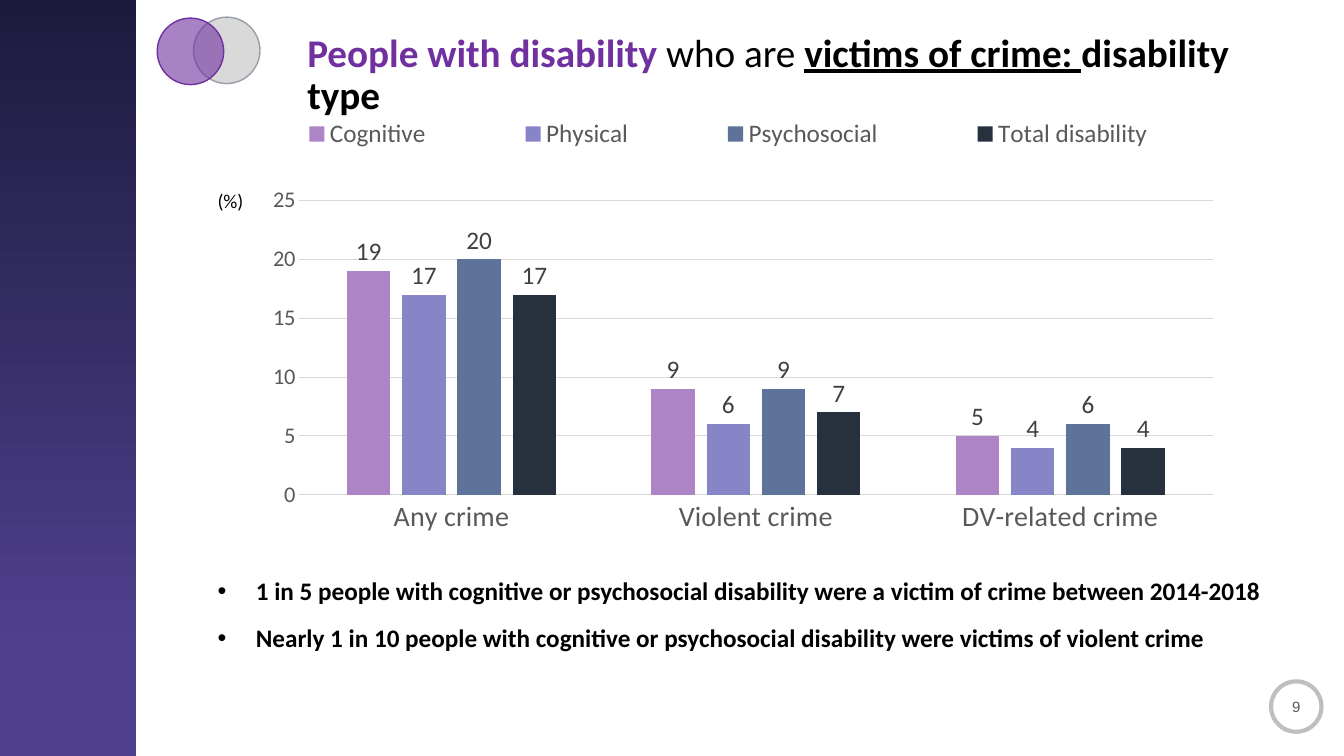
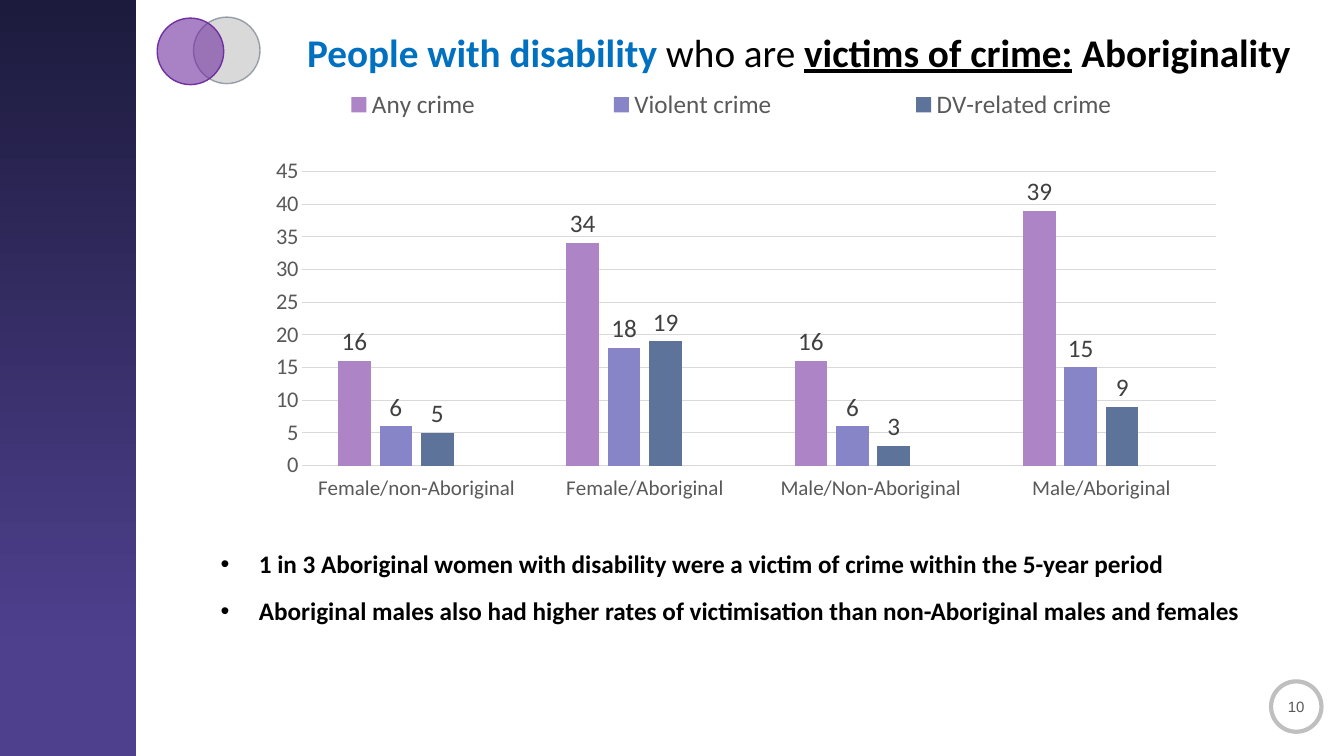
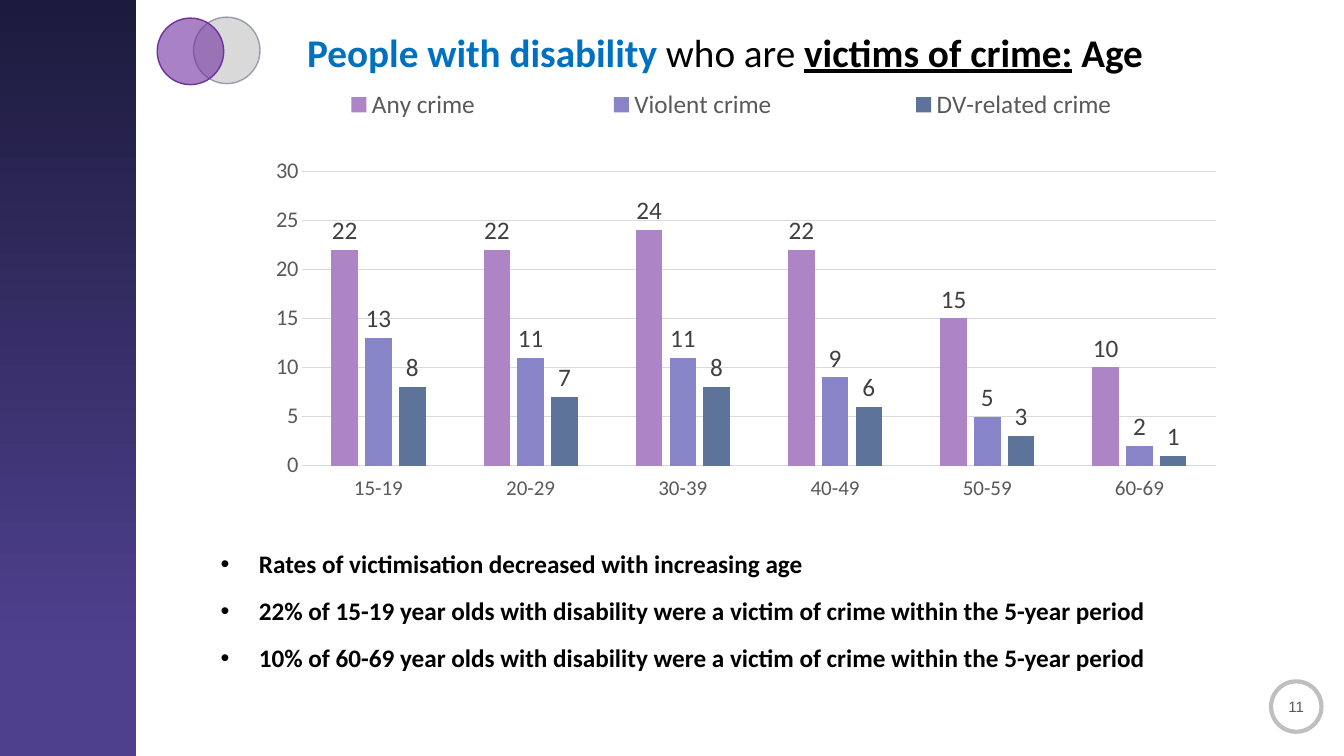
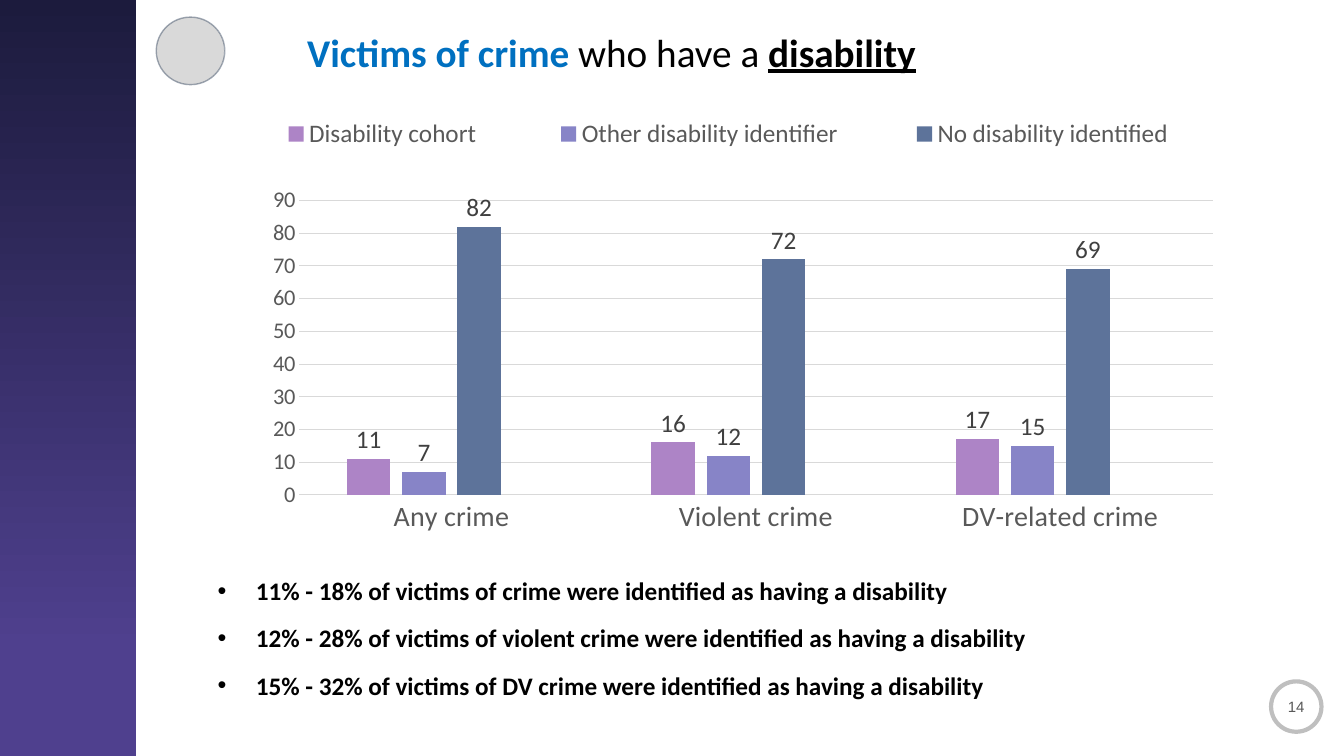
from dataclasses import dataclass
from typing import NamedTuple, Optional

from lxml import etree
from pptx import Presentation
from pptx import util as u
from pptx.chart.data import CategoryChartData
from pptx.dml.color import RGBColor
from pptx.enum import chart as charts, dml, shapes, text
from pptx.oxml.ns import qn

# Lengths are cells of a grid with ten columns and ten rows to the inch
CELL = u.Inches(0.1)
COLUMNS, ROWS = 133.33, 75

# Shared look
FONT, NUMBER_FONT = "Calibri", "Arial"
BLACK, WHITE = "000000", "FFFFFF"
PURPLE, BLUE = "7030A0", "0070C0"
BAND_TOP, BAND_BOTTOM = "1C1B3D", "4F408E"
SLATE, SILVER, RING_GREY = "44546A", "D9D9D9", "BFBFBF"
AXIS_GREY, LABEL_GREY = "595959", "404040"
SERIES_COLORS = ("AD84C6", "8784C7", "5D739A", "27303D")


class Box(NamedTuple):
    left: float
    top: float
    width: float
    height: float


class Run(NamedTuple):
    text: str
    color: str = BLACK
    bold: bool = True
    underline: bool = False


@dataclass(frozen=True)
class Placement:
    chart: Box
    bullets_left: float
    bullets_top: float
    category_size: int
    labels_low: bool = False


@dataclass(frozen=True)
class CrimeSlide:
    number: int
    title: tuple[Run, ...]
    placement: Placement
    categories: tuple[str, ...]
    series: dict[str, tuple[Optional[int], ...]]
    axis_top: int
    axis_step: int
    bullets: tuple[str, ...]
    title_width: float = 102.3
    bullets_width: float = 104
    unit: str = ""
    overlapping: bool = True


LOWER = Placement(Box(21.6, 9.9, 101.3, 48.1), 20.6, 56.3, 20)
UPPER = Placement(Box(21.9, 7, 101.3, 48.1), 20.9, 53.6, 15, labels_low=True)

# Parts of the chart, in cells from its corner
PLOT = Box(8.1, 10, 90.6, 29.2)
LEGEND = Box(0, 1, 101.3, 4.8)

BAND = Box(0, 0, 13.5, ROWS)
NUMBER_RING = Box(126.1, 67.6, 5, 5)
UNIT_BOX = Box(20.6, 18.3, 4.6, 3.4)
LEFT_CIRCLE = Box(15.6, 1.8, 6.6, 6.6)
RIGHT_CIRCLE = Box(19.2, 1.7, 6.6, 6.6)
SINGLE_CIRCLE = Box(15.5, 1.7, 6.8, 6.7)


def rgb(color: str) -> RGBColor:
    return RGBColor.from_string(color)


def place(box: Box) -> tuple[int, ...]:
    return tuple(round(length * CELL) for length in box)


def style_font(font, *, size: float, color: str = BLACK, name: str = FONT,
               bold: bool = False, underline: bool = False) -> None:
    font.name, font.size = name, u.Pt(size)
    font.bold, font.underline = bold, underline
    font.color.rgb = rgb(color)


def add_run(paragraph, words: str, **style) -> None:
    run = paragraph.add_run()
    run.text = words
    style_font(run.font, **style)


def add_text_box(slide, box: Box, wrap: bool = True):
    frame = slide.shapes.add_textbox(*place(box)).text_frame
    frame.word_wrap = wrap
    return frame


def add_shape(slide, kind, box: Box, line: Optional[str] = None, weight: float = 1):
    shape = slide.shapes.add_shape(kind, *place(box))
    shape.shadow.inherit = False
    if line:
        shape.line.color.rgb = rgb(line)
        shape.line.width = u.Pt(weight)
    else:
        shape.line.fill.background()
    return shape


def set_opacity(properties, percent: int) -> None:
    """Make the first solid fill under the element see-through."""
    color = next(properties.iter(qn("a:srgbClr")))
    etree.SubElement(color, qn("a:alpha"), val=str(percent * 1000))


# Frame of every slide
def add_band(slide) -> None:
    fill = add_shape(slide, shapes.MSO_SHAPE.RECTANGLE, BAND).fill
    fill.gradient()
    fill.gradient_angle = 270
    stops = ((0, BAND_TOP), (0.86, BAND_BOTTOM))
    for stop, (position, color) in zip(fill.gradient_stops, stops):
        stop.position = position
        stop.color.rgb = rgb(color)


def add_number(slide, number: int) -> None:
    ring = add_shape(slide, shapes.MSO_SHAPE.OVAL, NUMBER_RING, RING_GREY, 3)
    ring.fill.solid()
    ring.fill.fore_color.rgb = rgb(WHITE)
    frame = ring.text_frame
    frame.margin_left = frame.margin_right = 0
    frame.vertical_anchor = text.MSO_ANCHOR.MIDDLE
    paragraph = frame.paragraphs[0]
    paragraph.alignment = text.PP_ALIGN.CENTER
    add_run(paragraph, str(number), size=10.7, color=AXIS_GREY, name=NUMBER_FONT)


def add_circles(slide, overlapping: bool) -> None:
    grey = add_shape(slide, shapes.MSO_SHAPE.OVAL,
                     RIGHT_CIRCLE if overlapping else SINGLE_CIRCLE, SLATE)
    set_opacity(grey.line.fill._xPr, 50)
    grey.fill.patterned()
    grey.fill.pattern = dml.MSO_PATTERN.DARK_VERTICAL
    grey.fill.fore_color.rgb = rgb(SILVER)
    grey.fill.back_color.rgb = rgb(WHITE)
    if overlapping:
        purple = add_shape(slide, shapes.MSO_SHAPE.OVAL, LEFT_CIRCLE, PURPLE)
        purple.fill.solid()
        purple.fill.fore_color.rgb = rgb(PURPLE)
        set_opacity(purple.fill._xPr.find(qn("a:solidFill")), 60)


def add_title(slide, runs: tuple[Run, ...], width: float) -> None:
    paragraph = add_text_box(slide, Box(29.5, 2.8, width, 14.5)).paragraphs[0]
    paragraph.line_spacing = 0.9
    for run in runs:
        add_run(paragraph, run.text, size=28, color=run.color,
                bold=run.bold, underline=run.underline)


def add_bullets(slide, bullets: tuple[str, ...], box: Box) -> None:
    frame = add_text_box(slide, box)
    for index, bullet in enumerate(bullets):
        paragraph = frame.add_paragraph() if index else frame.paragraphs[0]
        properties = paragraph._p.get_or_add_pPr()
        indent = u.Inches(0.38)
        properties.set("marL", str(indent))
        properties.set("indent", str(-indent))
        etree.SubElement(properties, qn("a:buFont"), typeface="Arial")
        etree.SubElement(properties, qn("a:buChar"), char="•")
        paragraph.line_spacing = 1.1
        paragraph.space_before = u.Pt(10 if index else 0)
        add_run(paragraph, bullet, size=18, bold=True)


# Chart
def make_layout(part: Box, whole: Box, inner: bool = False):
    """Return a manual layout that puts the part at its share of the chart."""
    layout = etree.Element(qn("c:layout"))
    manual = etree.SubElement(layout, qn("c:manualLayout"))
    settings = {"layoutTarget": "inner"} if inner else {}
    settings |= {"xMode": "edge", "yMode": "edge",
                 "x": part.left / whole.width, "y": part.top / whole.height,
                 "w": part.width / whole.width, "h": part.height / whole.height}
    for tag, value in settings.items():
        etree.SubElement(manual, qn(f"c:{tag}"), val=str(value))
    return layout


def remove_layout(element) -> None:
    for layout in element.findall(qn("c:layout")):
        element.remove(layout)


def add_legend(chart, box: Box, hidden: list[int]) -> None:
    chart.has_legend = True
    legend = chart.legend
    legend.position = charts.XL_LEGEND_POSITION.BOTTOM
    legend.include_in_layout = False
    style_font(legend.font, size=18, color=AXIS_GREY)
    element = legend._element
    remove_layout(element)
    position = element.find(qn("c:legendPos"))
    position.addnext(make_layout(LEGEND, box))
    for index in reversed(hidden):
        entry = etree.Element(qn("c:legendEntry"))
        etree.SubElement(entry, qn("c:idx"), val=str(index))
        etree.SubElement(entry, qn("c:delete"), val="1")
        position.addnext(entry)


def style_axes(chart, content: CrimeSlide) -> None:
    category, value = chart.category_axis, chart.value_axis
    sizes = (content.placement.category_size, 16)
    for axis, size in zip((category, value), sizes):
        axis.major_tick_mark = axis.minor_tick_mark = charts.XL_TICK_MARK.NONE
        style_font(axis.tick_labels.font, size=size, color=AXIS_GREY)
    if content.placement.labels_low:
        category.tick_label_position = charts.XL_TICK_LABEL_POSITION.LOW
    value.minimum_scale, value.maximum_scale = 0, content.axis_top
    value.major_unit = content.axis_step
    value.has_major_gridlines = True
    value.format.line.fill.background()
    for line in (category.format.line, value.major_gridlines.format.line):
        line.color.rgb = rgb(SILVER)
        line.width = u.Pt(0.75)


def add_crime_chart(slide, content: CrimeSlide) -> None:
    box = content.placement.chart
    data = CategoryChartData()
    data.categories = content.categories
    for name, values in content.series.items():
        data.add_series(name, values)
    chart = slide.shapes.add_chart(
        charts.XL_CHART_TYPE.COLUMN_CLUSTERED, *place(box), data).chart
    chart.has_title = False
    style_font(chart.font, size=14)

    plot = chart.plots[0]
    plot.gap_width, plot.overlap = 219, -27
    plot.vary_by_categories = False
    plot.has_data_labels = True
    labels = plot.data_labels
    labels.show_value = True
    labels.position = charts.XL_LABEL_POSITION.OUTSIDE_END
    style_font(labels.font, size=18, color=LABEL_GREY)
    for series, color in zip(plot.series, SERIES_COLORS):
        series.format.fill.solid()
        series.format.fill.fore_color.rgb = rgb(color)

    style_axes(chart, content)
    empty = [index for index, values in enumerate(content.series.values())
             if all(value is None for value in values)]
    add_legend(chart, box, empty)
    plot_area = chart._chartSpace.chart.plotArea
    remove_layout(plot_area)
    plot_area.insert(0, make_layout(PLOT, box, inner=True))


# Content
def victims_title(color: str, underlined: str, topic: str) -> tuple[Run, ...]:
    return (Run("People with disability ", color), Run("who are ", bold=False),
            Run(underlined, underline=True), Run(topic))


CRIMES = ("Any crime", "Violent crime", "DV-related crime")

SLIDES = (
    CrimeSlide(
        number=9,
        title=victims_title(PURPLE, "victims of crime: ", "disability type"),
        placement=LOWER,
        categories=CRIMES,
        series={"Cognitive": (19, 9, 5), "Physical": (17, 6, 4),
                "Psychosocial": (20, 9, 6), "Total disability": (17, 7, 4)},
        axis_top=25, axis_step=5,
        bullets=("1 in 5 people with cognitive or psychosocial disability were a victim of crime between 2014-2018",
                 "Nearly 1 in 10 people with cognitive or psychosocial disability were victims of violent crime"),
        title_width=98.2, bullets_width=107.1, unit="(%)"),
    CrimeSlide(
        number=10,
        title=victims_title(BLUE, "victims of crime:", " Aboriginality"),
        placement=UPPER,
        categories=("Female/non-Aboriginal", "Female/Aboriginal",
                    "Male/Non-Aboriginal ", "Male/Aboriginal"),
        series={"Any crime": (16, 34, 16, 39), "Violent crime ": (6, 18, 6, 15),
                "DV-related crime": (5, 19, 3, 9), "Series 4": (None,) * 4},
        axis_top=45, axis_step=5,
        bullets=("1 in 3 Aboriginal women with disability were a victim of crime within the 5-year period",
                 "Aboriginal males also had higher rates of victimisation than non-Aboriginal males and females")),
    CrimeSlide(
        number=11,
        title=victims_title(BLUE, "victims of crime:", " Age"),
        placement=UPPER,
        categories=("15-19", "20-29", "30-39", "40-49", "50-59", "60-69"),
        series={"Any crime": (22, 22, 24, 22, 15, 10),
                "Violent crime ": (13, 11, 11, 9, 5, 2),
                "DV-related crime": (8, 7, 8, 6, 3, 1)},
        axis_top=30, axis_step=5,
        bullets=("Rates of victimisation decreased with increasing age",
                 "22% of 15-19 year olds with disability were a victim of crime within the 5-year period",
                 "10% of 60-69 year olds with disability were a victim of crime within the 5-year period")),
    CrimeSlide(
        number=14,
        title=(Run("Victims of crime", BLUE), Run(" who have a ", bold=False),
               Run("disability", underline=True)),
        placement=LOWER,
        categories=CRIMES,
        series={"Disability cohort ": (11, 16, 17),
                "Other disability identifier": (7, 12, 15),
                "No disability identified": (82, 72, 69),
                "Series 4": (None,) * 3},
        axis_top=90, axis_step=10,
        bullets=("11% - 18% of victims of crime were identified as having a disability",
                 "12% - 28% of victims of violent crime were identified as having a disability",
                 "15% - 32% of victims of DV crime were identified as having a disability"),
        overlapping=False),
)


def build_slide(presentation, content: CrimeSlide) -> None:
    slide = presentation.slides.add_slide(presentation.slide_layouts[6])
    placement = content.placement
    add_band(slide)
    add_number(slide, content.number)
    add_crime_chart(slide, content)
    if content.unit:
        frame = add_text_box(slide, UNIT_BOX, wrap=False)
        add_run(frame.paragraphs[0], content.unit, size=14)
    add_bullets(slide, content.bullets,
                Box(placement.bullets_left, placement.bullets_top,
                    content.bullets_width, 6.7))
    add_title(slide, content.title, content.title_width)
    add_circles(slide, content.overlapping)


def main() -> None:
    presentation = Presentation()
    presentation.slide_width = round(COLUMNS * CELL)
    presentation.slide_height = ROWS * CELL
    for content in SLIDES:
        build_slide(presentation, content)
    presentation.save("out.pptx")


if __name__ == "__main__":
    main()
